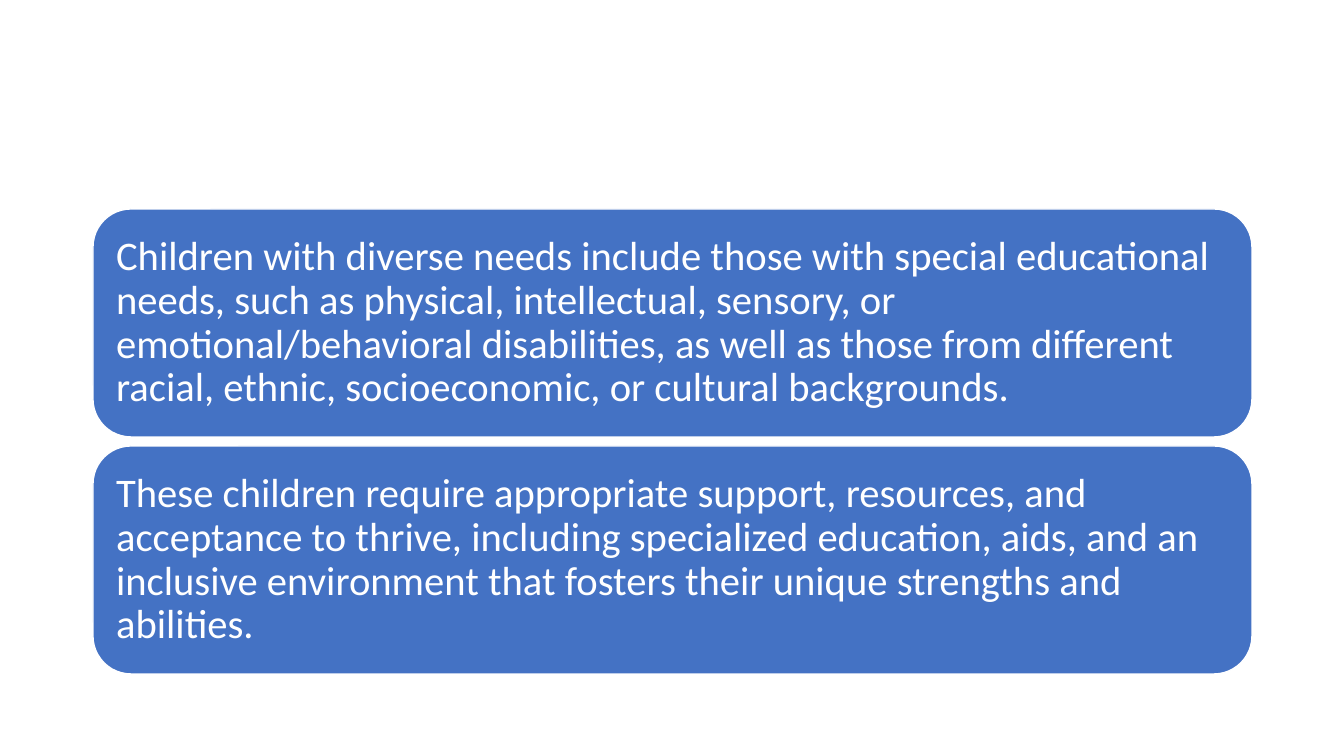
from pptx import Presentation
from pptx.dml.color import RGBColor
from pptx.enum.shapes import MSO_SHAPE
from pptx.enum.text import MSO_ANCHOR, PP_ALIGN
from pptx.util import Pt

EMU_PER_PX = 914400 / 100.8
THEME = {
    "card": RGBColor(0x44, 0x72, 0xC4),
    "light": RGBColor(0xFF, 0xFF, 0xFF),
    "font": "Calibri",
    "size": Pt(29),
}


def px(length):
    return round(length * EMU_PER_PX)


presentation = Presentation()
presentation.slide_width, presentation.slide_height = px(1344), px(756)
slide = presentation.slides.add_slide(presentation.slide_layouts[6])

# Statements, from top to bottom
statements = [
    "Children with diverse needs include those with special educational needs, "
    "such as physical, intellectual, sensory, or emotional/behavioral disabilities, "
    "as well as those from different racial, ethnic, socioeconomic, or cultural backgrounds.",
    "These children require appropriate support, resources, and acceptance to thrive, "
    "including specialized education, aids, and an inclusive environment "
    "that fosters their unique strengths and abilities.",
]
CARD_LEFT, CARD_TOP, CARD_WIDTH, CARD_HEIGHT = 93, 209, 1159, 228
CARD_PITCH = 237
CARD_INSET = 12

# One rounded card per statement
for row, statement in enumerate(statements):
    card = slide.shapes.add_shape(
        MSO_SHAPE.ROUNDED_RECTANGLE,
        px(CARD_LEFT), px(CARD_TOP + row * CARD_PITCH), px(CARD_WIDTH), px(CARD_HEIGHT),
    )
    card.shadow.inherit = False
    card.fill.solid()
    card.fill.fore_color.rgb = THEME["card"]
    card.line.color.rgb = THEME["light"]
    card.line.width = Pt(1)

    frame = card.text_frame
    frame.word_wrap = True
    frame.vertical_anchor = MSO_ANCHOR.MIDDLE
    frame.margin_left = frame.margin_right = px(CARD_INSET)
    frame.margin_top = frame.margin_bottom = px(CARD_INSET)

    paragraph = frame.paragraphs[0]
    paragraph.text = statement
    paragraph.alignment = PP_ALIGN.LEFT
    paragraph.line_spacing = 0.9
    paragraph.font.name = THEME["font"]
    paragraph.font.size = THEME["size"]
    paragraph.font.color.rgb = THEME["light"]

presentation.save("out.pptx")
